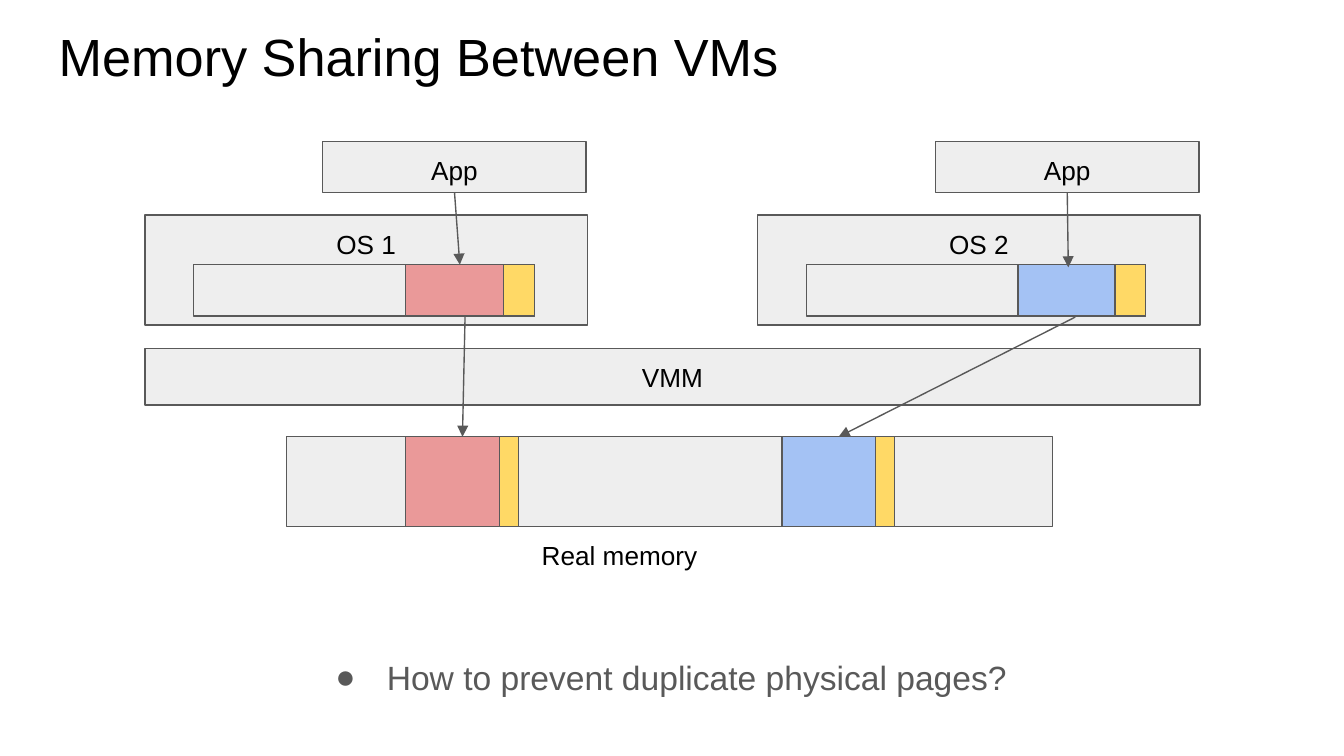
from dataclasses import dataclass

from lxml import etree
from pptx import Presentation
from pptx.dml import color as col
from pptx.enum import shapes as kinds, text as txt
from pptx.oxml import ns
from pptx.util import Cm, Pt

GRAY, EDGE, INK = "EEEEEE", "595959", "000000"
RED, BLUE, GOLD = "EA9999", "A4C2F4", "FFD966"
STEP = 11.58
LEFT = txt.PP_ALIGN.LEFT
MID = txt.PP_ALIGN.CENTER


@dataclass
class Box:
    x: float
    y: float
    w: float
    h: float
    fill: str = GRAY
    label: str = ""


@dataclass
class Arrow:
    x1: float
    y1: float
    x2: float
    y2: float


@dataclass
class Guest:
    name: str
    x: float
    page: float
    fill: str
    real: float


def rgb(code: str) -> col.RGBColor:
    return col.RGBColor.from_string(code)


def write(shape, words: str, size: int, tint: str, align, top: float = 0.25) -> None:
    frame = shape.text_frame
    frame.text = words
    frame.word_wrap = True
    frame.auto_size = txt.MSO_AUTO_SIZE.NONE
    frame.vertical_anchor = txt.MSO_ANCHOR.TOP
    frame.margin_left = frame.margin_right = frame.margin_bottom = Cm(0.25)
    frame.margin_top = Cm(top)
    para = frame.paragraphs[0]
    para.alignment = align
    para.space_before = Pt(0)
    for run in para.runs:
        run.font.name = "Arial"
        run.font.size = Pt(size)
        run.font.color.rgb = rgb(tint)


def place(shape, x: float, y: float, w: float, h: float) -> None:
    shape.left, shape.top = Cm(x), Cm(y)
    shape.width, shape.height = Cm(w), Cm(h)


def draw_box(slide, box: Box) -> None:
    shape = slide.shapes.add_shape(
        kinds.MSO_SHAPE.RECTANGLE, Cm(box.x), Cm(box.y), Cm(box.w), Cm(box.h))
    shape.shadow.inherit = False
    shape.fill.solid()
    shape.fill.fore_color.rgb = rgb(box.fill)
    shape.line.color.rgb = rgb(EDGE)
    shape.line.width = Pt(0.75)
    if box.label:
        write(shape, box.label, 14, INK, MID)


def draw_arrow(slide, arrow: Arrow) -> None:
    link = slide.shapes.add_connector(
        kinds.MSO_CONNECTOR.STRAIGHT,
        Cm(arrow.x1), Cm(arrow.y1), Cm(arrow.x2), Cm(arrow.y2))
    link.line.color.rgb = rgb(EDGE)
    link.line.width = Pt(0.75)
    line = link.line._get_or_add_ln()
    etree.SubElement(line, ns.qn("a:tailEnd"), type="triangle")
    etree.SubElement(link._element.spPr, ns.qn("a:effectLst"))


def draw_page(slide, page: Box, share: float) -> None:
    draw_box(slide, page)
    draw_box(slide, Box(page.x + page.w - share, page.y, share, page.h, GOLD))


def draw_guest(slide, guest: Guest) -> None:
    x = guest.x
    draw_box(slide, Box(x, 4.06, 8.36, 2.08, label=guest.name))
    draw_box(slide, Box(x + 3.36, 2.67, 4.98, 0.97, label="App"))
    draw_page(slide, Box(x + 4.92, 5, guest.page, 0.97, guest.fill), 0.58)
    draw_box(slide, Box(x + 0.92, 5, 4, 0.97))
    draw_page(slide, Box(guest.real, 8.25, 2.13, 1.7, guest.fill), 0.36)


def add_bullet(para) -> None:
    para.line_spacing = 1.15
    props = para._p.get_or_add_pPr()
    props.set("marL", str(Cm(1.27)))
    props.set("indent", str(Cm(-0.97)))
    tint = etree.SubElement(props, ns.qn("a:buClr"))
    etree.SubElement(tint, ns.qn("a:srgbClr"), val=EDGE)
    etree.SubElement(props, ns.qn("a:buChar"), char="●")


def main() -> None:
    deck = Presentation()
    deck.slide_width, deck.slide_height = Cm(25.4), Cm(14.28)
    slide = deck.slides.add_slide(deck.slide_layouts[1])

    title, body = slide.placeholders
    place(title, 0.86, 0.15, 23.67, 1.6)
    write(title, "Memory Sharing Between VMs", 28, INK, LEFT, 0.3)
    place(body, 5.79, 12.04, 13.82, 1.24)
    write(body, "How to prevent duplicate physical pages?", 18, EDGE, LEFT)
    add_bullet(body.text_frame.paragraphs[0])

    draw_box(slide, Box(2.74, 6.58, 19.94, 1.07, label="VMM"))
    draw_box(slide, Box(5.41, 8.25, 14.48, 1.7))
    note = slide.shapes.add_textbox(Cm(9.6), Cm(9.93), Cm(4.22), Cm(1.07))
    write(note, "Real memory", 14, INK, MID)

    guests = [
        Guest("OS 1", 2.74, 2.44, RED, 7.67),
        Guest("OS 2", 2.74 + STEP, 2.41, BLUE, 14.78),
    ]
    for guest in guests:
        draw_guest(slide, guest)

    arrows = [
        Arrow(8.59, 3.64, 8.69, 5),
        Arrow(20.17, 3.64, 20.19, 5.05),
        Arrow(8.79, 5.99, 8.74, 8.25),
        Arrow(20.32, 5.99, 15.85, 8.25),
    ]
    for arrow in arrows:
        draw_arrow(slide, arrow)

    deck.save("out.pptx")


if __name__ == "__main__":
    main()
